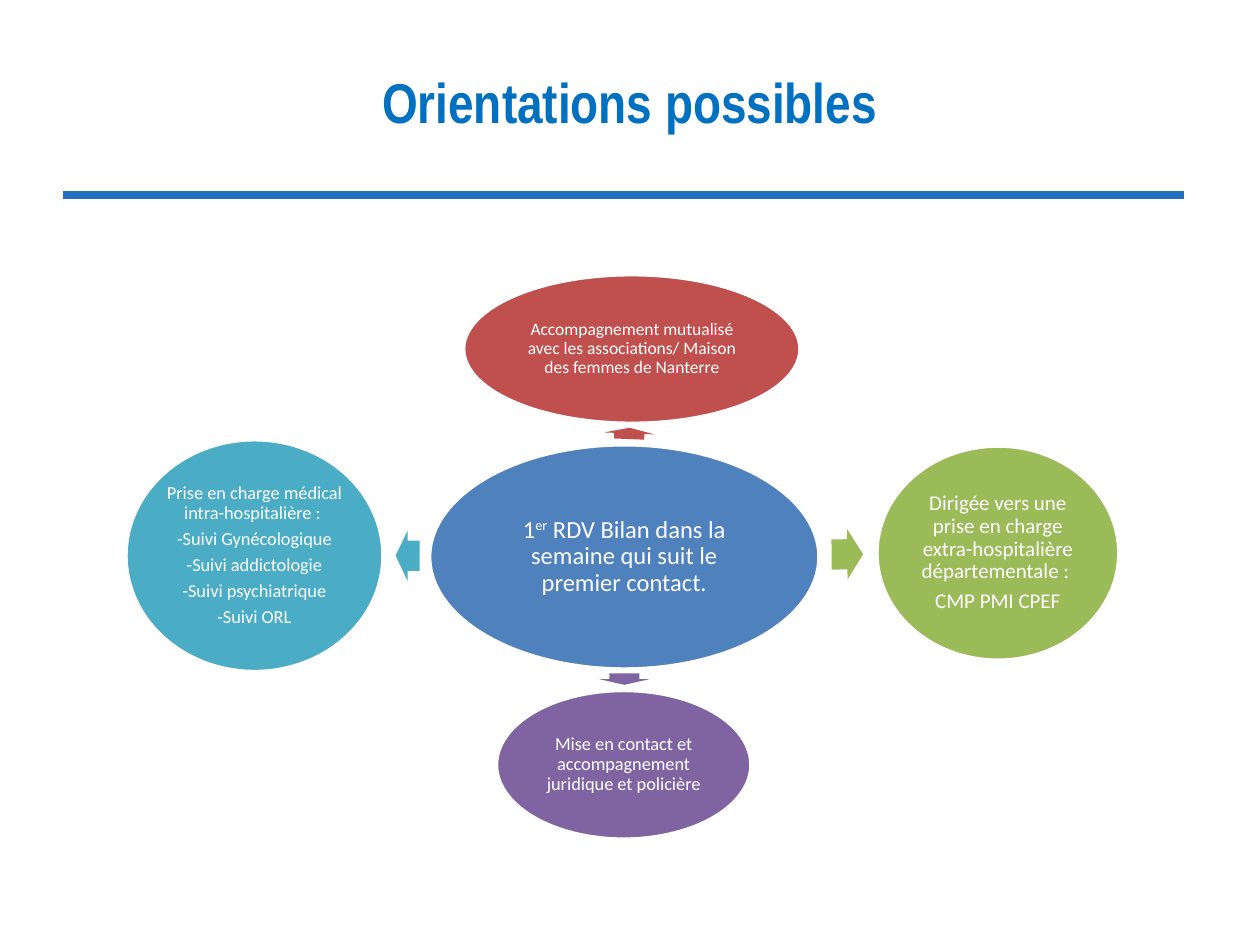
from lxml.etree import SubElement
from pptx import Presentation
from pptx.dml.color import RGBColor
from pptx.enum.shapes import MSO_CONNECTOR as Connector, MSO_SHAPE as Shape
from pptx.enum.text import MSO_ANCHOR as Anchor, MSO_AUTO_SIZE as AutoSize, PP_ALIGN as Align
from pptx.oxml.ns import qn
from pptx.util import Inches, Pt

COLUMNS, ROWS = 100, 75
WIDTH, HEIGHT = Inches(10), Inches(7.5)
WHITE, TITLE_BLUE, RULE_BLUE = "FFFFFF", "0070C0", "2472BD"
BLUE, RED, GREEN, PURPLE, TEAL = "4F81BD", "C0504D", "9BBB59", "8064A2", "4BACC6"

CENTRE = (34.1, 35.3, 30.9, 17.8), BLUE, 14, [
    [("1", False), ("er", True), (" RDV Bilan dans la semaine qui suit le premier contact.", False)],
]
ORIENTATIONS = [
    ((36.8, 21.8, 26.7, 11.8), RED, 10,
     ["Accompagnement mutualisé avec les associations/ Maison des femmes de Nanterre"],
     (49.5, 32.4, 0.9, 4), 272.3),
    ((69.6, 35.4, 19.2, 17), GREEN, 12,
     ["Dirigée vers une prise en charge extra-hospitalière départementale : ", "CMP PMI CPEF"],
     (66, 42, 2.5, 4), 359.5),
    ((39.4, 54.8, 20.2, 11.8), PURPLE, 10.5,
     ["Mise en contact et accompagnement juridique et policière"],
     (49.1, 51.9, 0.9, 4), 90),
    ((10, 34.9, 20.4, 18.4), TEAL, 10.5,
     ["Prise en charge médical intra-hospitalière : ", "-Suivi Gynécologique",
      "-Suivi addictologie", "-Suivi psychiatrique", "-Suivi ORL"],
     (31.4, 42.1, 1.9, 4), 180.2),
]


def color(value):
    return RGBColor.from_string(value)


def across(columns):
    return round(WIDTH * columns / COLUMNS)


def down(rows):
    return round(HEIGHT * rows / ROWS)


def place(box):
    left, top, width, height = box
    return across(left), down(top), across(width), down(height)


def add_run(paragraph, text, font_name, size, text_color, bold=False, superscript=False):
    run = paragraph.add_run()
    run.text = text
    run.font.name = font_name
    run.font.size = Pt(size)
    run.font.bold = bold
    run.font.color.rgb = color(text_color)
    if superscript:
        run.font._element.set("baseline", "30000")


def add_title(slide, text):
    title = slide.shapes.title
    title.left, title.top, title.width, title.height = place((1.2, 3.6, 97.6, 8.9))
    frame = title.text_frame
    frame.auto_size = AutoSize.NONE
    frame.vertical_anchor = Anchor.MIDDLE
    paragraph = frame.paragraphs[0]
    paragraph.alignment = Align.CENTER
    add_run(paragraph, text, "Arial Narrow", 32, TITLE_BLUE, bold=True)


def add_rule(slide):
    rule = slide.shapes.add_connector(
        Connector.STRAIGHT, across(5), down(15.5), across(94), down(15.5))
    rule.line.color.rgb = color(RULE_BLUE)
    rule.line.width = Pt(4.5)
    SubElement(rule._element.spPr, qn("a:effectLst"))


def add_filled_shape(slide, kind, box, fill):
    shape = slide.shapes.add_shape(kind, *place(box))
    shape.shadow.inherit = False
    shape.fill.solid()
    shape.fill.fore_color.rgb = color(fill)
    return shape


def add_ellipse(slide, box, fill, size, paragraphs):
    ellipse = add_filled_shape(slide, Shape.OVAL, box, fill)
    ellipse.line.color.rgb = color(WHITE)
    ellipse.line.width = Pt(2)
    frame = ellipse.text_frame
    frame.word_wrap = True
    frame.vertical_anchor = Anchor.MIDDLE
    frame.margin_left = frame.margin_right = Inches(0.02)
    frame.margin_top = frame.margin_bottom = Inches(0.02)
    for index, runs in enumerate(paragraphs):
        paragraph = frame.add_paragraph() if index else frame.paragraphs[0]
        paragraph.alignment = Align.CENTER
        paragraph.line_spacing = 0.9
        paragraph.space_after = Pt(size * 0.35)
        for text, superscript in runs:
            add_run(paragraph, text, "Calibri", size, WHITE, superscript=superscript)


def add_arrow(slide, box, fill, rotation):
    arrow = add_filled_shape(slide, Shape.RIGHT_ARROW, box, fill)
    arrow.line.fill.background()
    arrow.adjustments[0], arrow.adjustments[1] = 0.6, 0.5
    arrow.rotation = rotation


def main():
    presentation = Presentation()
    presentation.slide_width, presentation.slide_height = WIDTH, HEIGHT
    slide = presentation.slides.add_slide(presentation.slide_layouts[5])
    add_rule(slide)
    add_title(slide, "Orientations possibles")
    add_ellipse(slide, *CENTRE)
    for box, fill, size, texts, arrow_box, rotation in ORIENTATIONS:
        add_arrow(slide, arrow_box, fill, rotation)
        add_ellipse(slide, box, fill, size, [[(text, False)] for text in texts])
    presentation.save("out.pptx")


if __name__ == "__main__":
    main()
